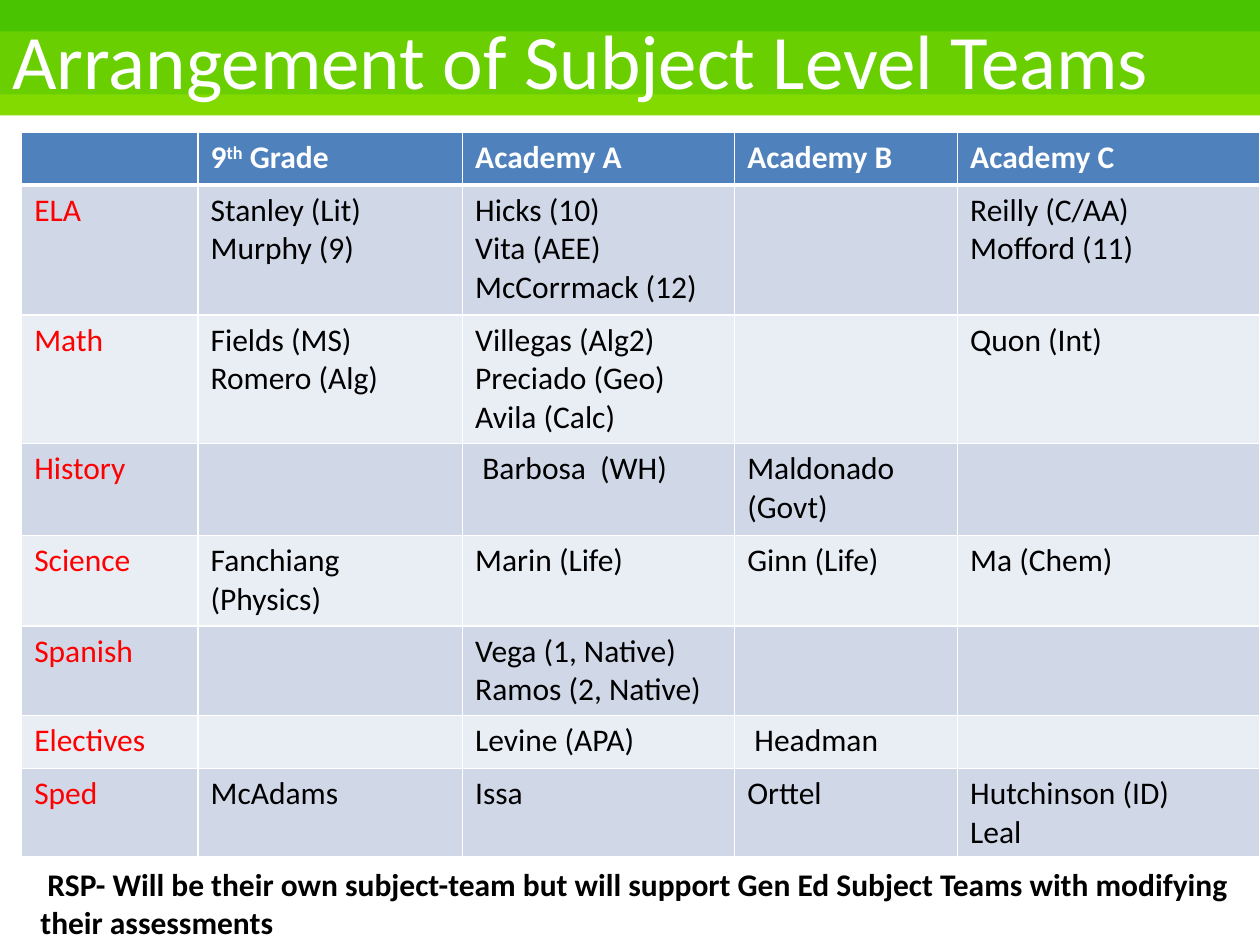
import dataclasses

import lxml.etree
import pptx
import pptx.dml.color
import pptx.enum.shapes
import pptx.enum.text
import pptx.oxml.ns
import pptx.util

Pt = pptx.util.Pt
ANCHOR = pptx.enum.text.MSO_ANCHOR


@dataclasses.dataclass(frozen=True)
class Theme:
    font: str = "Calibri"
    title_size: int = 44
    body_size: int = 18
    light: str = "FFFFFF"
    ink: str = "000000"
    subject: str = "FF0000"
    header: str = "4F81BD"
    bands: tuple = ("D0D8E8", "E9EDF4")
    stripes: tuple = ((66, "83DA00"), (54, "69CF00"), (18, "48C400"))


THEME = Theme()

COLUMN_WIDTHS = (100.8, 151.2, 155.5, 127.4, 172.8)
ROW_HEIGHTS = (30, 74.2, 73.4, 52.6, 51.8, 51.1, 30.2, 50.4)
TEAMS = (
    ("", "9^th^ Grade", "Academy A", "Academy B", "Academy C"),
    ("ELA", "Stanley (Lit)\nMurphy (9)", "Hicks (10)\nVita (AEE) McCorrmack (12)",
     "", "Reilly (C/AA)\nMofford (11)"),
    ("Math", "Fields (MS)\nRomero (Alg)",
     "Villegas (Alg2)\nPreciado (Geo)\nAvila (Calc)", "", "Quon (Int)"),
    ("History", "", " Barbosa  (WH)", "Maldonado (Govt)", ""),
    ("Science", "Fanchiang (Physics)", "Marin (Life)", "Ginn (Life)", "Ma (Chem)"),
    ("Spanish", "", "Vega (1, Native)\nRamos (2, Native)", "", ""),
    ("Electives", "", "Levine (APA)", " Headman", ""),
    ("Sped", "McAdams", "Issa", "Orttel", "Hutchinson (ID)\nLeal"),
)


def rgb(value):
    return pptx.dml.color.RGBColor.from_string(value)


def apply_format(target, values):
    for name, value in values.items():
        setattr(target, name, value)


def write_text(frame, text, size, color, bold=False):
    for index, line in enumerate(text.split("\n")):
        paragraph = frame.paragraphs[0] if index == 0 else frame.add_paragraph()
        for part, words in enumerate(line.split("^")):
            if not words:
                continue
            run = paragraph.add_run()
            run.text = words
            apply_format(run.font, {"name": THEME.font, "size": Pt(size), "bold": bold})
            run.font.color.rgb = rgb(color)
            if part % 2:
                run.font._element.set("baseline", "30000")


def add_stripe(slide, height, color):
    stripe = slide.shapes.add_shape(
        pptx.enum.shapes.MSO_SHAPE.RECTANGLE, 0, 0, Pt(720), Pt(height))
    stripe.shadow.inherit = False
    stripe.fill.solid()
    stripe.fill.fore_color.rgb = rgb(color)
    stripe.line.fill.background()


def add_text(slide, box, text, size, color, bold=False, **frame_format):
    frame = slide.shapes.add_textbox(*map(Pt, box)).text_frame
    apply_format(frame, {"word_wrap": True, **frame_format})
    write_text(frame, text, size, color, bold)


def set_borders(cell, widths):
    qn = pptx.oxml.ns.qn
    properties = cell._tc.get_or_add_tcPr()
    for index, (side, width) in enumerate(widths.items()):
        border = lxml.etree.Element(qn("a:ln" + side), w=str(Pt(width)))
        fill = lxml.etree.SubElement(border, qn("a:solidFill"))
        lxml.etree.SubElement(fill, qn("a:srgbClr"), val=THEME.light)
        properties.insert(index, border)


def fill_cell(cell, text, row, column):
    is_header = row == 0
    color = THEME.light if is_header else THEME.ink if column else THEME.subject
    background = THEME.header if is_header else THEME.bands[(row - 1) % 2]
    cell.fill.solid()
    cell.fill.fore_color.rgb = rgb(background)
    set_borders(cell, {"L": 1, "R": 1, "T": 3 if row == 1 else 1,
                       "B": 3 if is_header else 1})
    write_text(cell.text_frame, text, THEME.body_size, color, is_header)


def add_team_table(slide, left, top):
    table = slide.shapes.add_table(
        len(ROW_HEIGHTS), len(COLUMN_WIDTHS), Pt(left), Pt(top),
        Pt(sum(COLUMN_WIDTHS)), Pt(sum(ROW_HEIGHTS))).table
    for column, width in zip(table.columns, COLUMN_WIDTHS):
        column.width = Pt(width)
    for row, height in zip(table.rows, ROW_HEIGHTS):
        row.height = Pt(height)
    for row, entries in enumerate(TEAMS):
        for column, text in enumerate(entries):
            fill_cell(table.cell(row, column), text, row, column)


def main():
    deck = pptx.Presentation()
    apply_format(deck, {"slide_width": Pt(720), "slide_height": Pt(540)})
    slide = deck.slides.add_slide(deck.slide_layouts[6])
    for height, color in THEME.stripes:
        add_stripe(slide, height, color)
    add_text(slide, (0, 0.7, 700, 65.5), "Arrangement of Subject Level Teams",
             THEME.title_size, THEME.light, vertical_anchor=ANCHOR.MIDDLE)
    add_team_table(slide, 12.4, 75.8)
    add_text(slide, (16, 468.7, 696, 72.7),
             " RSP- Will be their own subject-team but will support "
             "Gen Ed Subject Teams with modifying their assessments",
             THEME.body_size, THEME.ink, bold=True, margin_top=Pt(25.6))
    deck.save("out.pptx")


if __name__ == "__main__":
    main()
